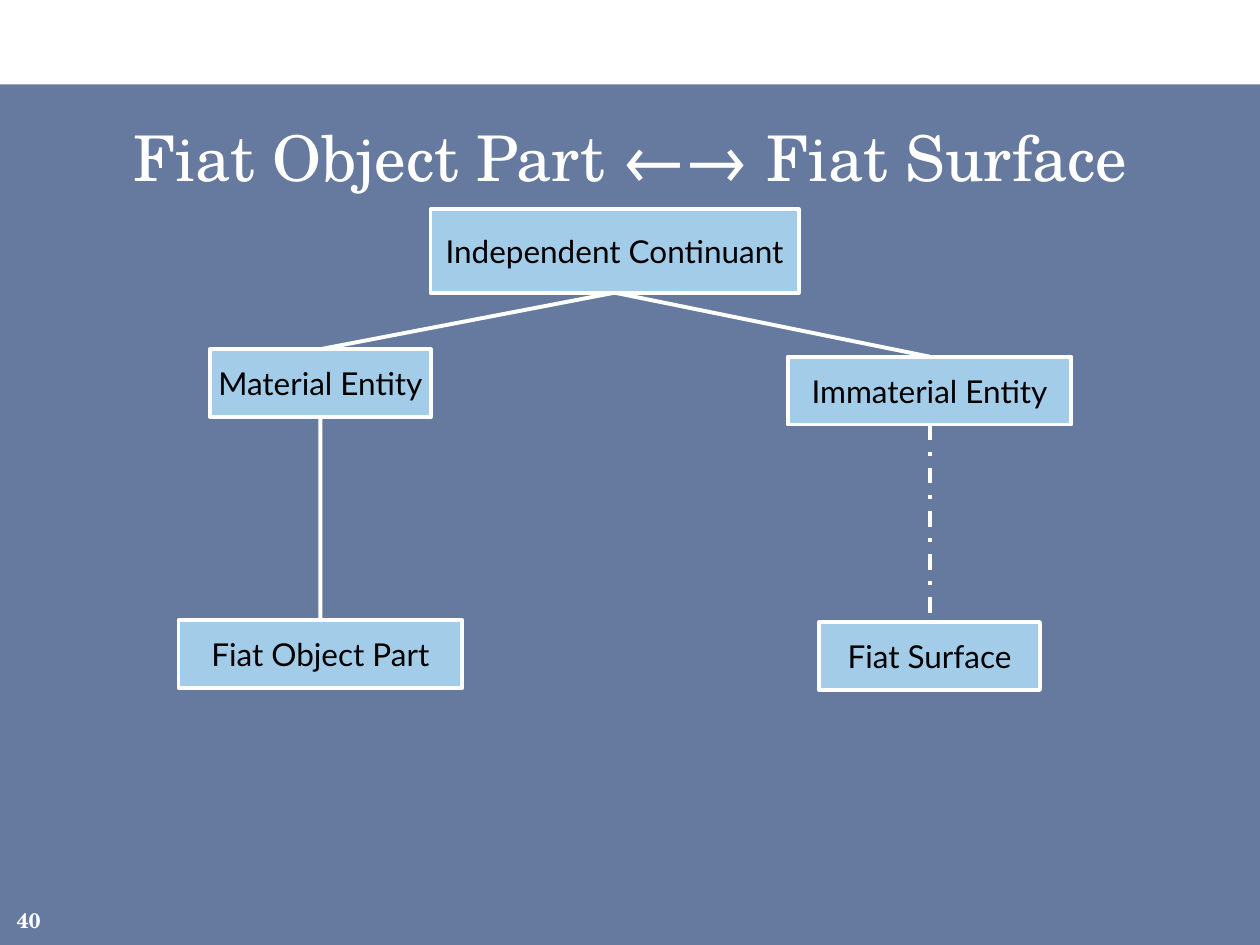
from lxml import etree
from pptx import Presentation, util as u
from pptx.dml.color import RGBColor
from pptx.enum import dml, shapes, text
from pptx.oxml.ns import qn

SERIF, SANS = "TeX Gyre Schola", "Lato"
WHITE, BLACK, NAVY, SKY = "FFFFFF", "000000", "002060", "A2CCE8"
TOP, BOTTOM = 0, 2


def paint(target, color):
    """Give a fill or line format a solid hex colour."""
    target.solid()
    target.fore_color.rgb = RGBColor.from_string(color)


def write(shape, words, font, size, color, align, bold=False):
    """Put one formatted, vertically centred paragraph into a shape."""
    frame = shape.text_frame
    frame.text = words
    frame.vertical_anchor = text.MSO_ANCHOR.MIDDLE
    paragraph = frame.paragraphs[0]
    paragraph.alignment = align
    paragraph.font.name = font
    paragraph.font.size = u.Pt(size)
    paragraph.font.bold = bold
    paint(paragraph.font.fill, color)


def add_rectangle(slide, left, top, width, height, color):
    """Add a flat filled rectangle measured in centimetres."""
    shape = slide.shapes.add_shape(
        shapes.MSO_SHAPE.RECTANGLE, *map(u.Cm, (left, top, width, height)))
    shape.shadow.inherit = False
    paint(shape.fill, color)
    return shape


def add_backdrop(slide, left, top, width, height):
    """Add the translucent navy panel."""
    panel = add_rectangle(slide, left, top, width, height, NAVY)
    panel.line.fill.background()
    color = panel.fill._xPr.find(qn("a:solidFill"))[0]
    etree.SubElement(color, qn("a:alpha"), val="60000")


def place_title(slide, left, top, width, height):
    """Move and format the title placeholder above the panel."""
    title = slide.shapes.title
    title.left, title.top, title.width, title.height = map(
        u.Cm, (left, top, width, height))
    write(title, "Fiat Object Part ←→ Fiat Surface", SERIF, 36, WHITE,
          text.PP_ALIGN.CENTER)
    slide.shapes._spTree.append(title._element)


def add_page_number(slide, left, top, width, height):
    """Add the page number at the lower left."""
    box = slide.shapes.add_textbox(*map(u.Cm, (left, top, width, height)))
    box.text_frame.word_wrap = True
    write(box, "40", SERIF, 12, WHITE, text.PP_ALIGN.RIGHT, bold=True)


def add_node(slide, center, top, width, height, words):
    """Add a labelled box centred on a column."""
    node = add_rectangle(slide, center - width / 2, top, width, height, SKY)
    paint(node.line.fill, WHITE)
    node.line.width = u.Pt(2.25)
    write(node, words, SANS, 18, BLACK, text.PP_ALIGN.CENTER)
    node.text_frame.word_wrap = False
    return node


def add_link(slide, parent, child, dash=None):
    """Connect the bottom of a parent to the top of its child."""
    link = slide.shapes.add_connector(shapes.MSO_CONNECTOR.STRAIGHT, 0, 0, 0, 0)
    link.begin_connect(parent, BOTTOM)
    link.end_connect(child, TOP)
    paint(link.line.fill, WHITE)
    link.line.width = u.Pt(2.25)
    if dash:
        link.line.dash_style = dash
    etree.SubElement(link._element.spPr, qn("a:effectLst"))


def add_tree(slide, left, top, width, height):
    """Draw the class tree with one branch near each side of the region."""
    wide, narrow, low = 5.72, 4.45, 1.37
    material_x, immaterial_x = left + wide / 2, left + width - wide / 2
    leaf_top = top + height - low
    root = add_node(slide, left + 8.79, top, 7.42, 1.68, "Independent Continuant")
    material = add_node(slide, material_x, top + 2.82, narrow, low, "Material Entity")
    immaterial = add_node(slide, immaterial_x, top + 2.97, wide, low, "Immaterial Entity")
    part = add_node(slide, material_x, leaf_top, wide, low, "Fiat Object Part")
    surface = add_node(slide, immaterial_x, leaf_top + 0.04, narrow, low, "Fiat Surface")
    add_link(slide, root, material)
    add_link(slide, root, immaterial)
    add_link(slide, material, part)
    add_link(slide, immaterial, surface, dml.MSO_LINE.DASH_DOT)


def main():
    """Build and save the slide."""
    presentation = Presentation()
    presentation.slide_width, presentation.slide_height = u.Cm(25.4), u.Cm(19.05)
    slide = presentation.slides.add_slide(presentation.slide_layouts[5])
    paint(slide.background.fill, WHITE)
    add_backdrop(slide, 0, 1.7, 25.4, 17.35)
    place_title(slide, 0.64, 2.1, 24.13, 2.1)
    add_page_number(slide, -0.2, 18.03, 1.27, 1.02)
    add_tree(slide, 3.6, 4.22, 18, 9.65)
    presentation.save("out.pptx")


if __name__ == "__main__":
    main()
